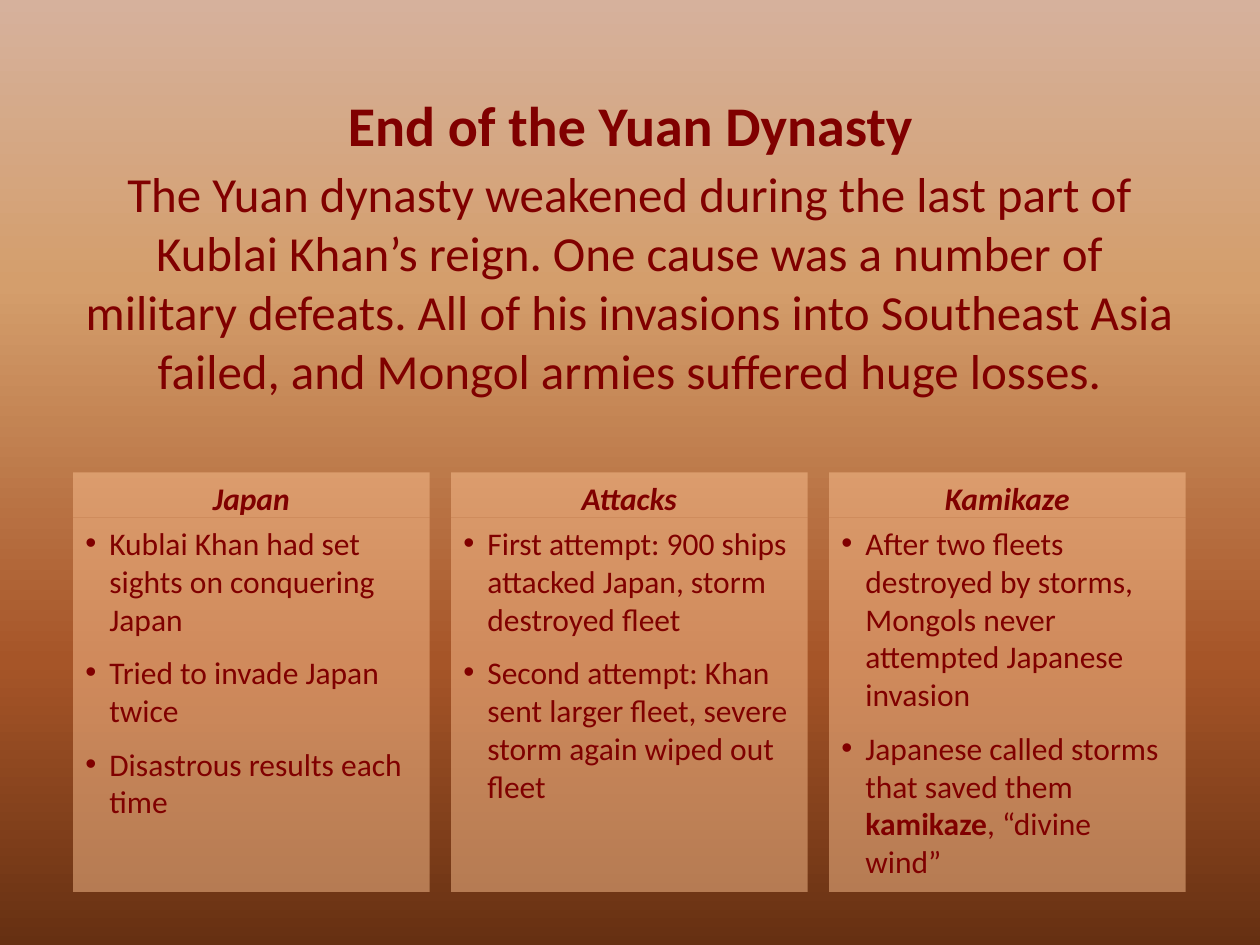
import copy
from dataclasses import dataclass

import pptx
import pptx.dml.color
import pptx.enum.shapes
import pptx.enum.text
import pptx.oxml
import pptx.oxml.ns
import pptx.util
from pptx.util import Inches

qn = pptx.oxml.ns.qn
PP_ALIGN = pptx.enum.text.PP_ALIGN


@dataclass(frozen=True)
class Theme:
    font: str = "Calibri"
    text: str = "800000"
    panel: str = "FAC090"
    panel_opacity: int = 50
    background: tuple = ((0, "D6B19C"), (30, "D49E6C"), (70, "A65528"), (100, "663012"))
    title_size: int = 32
    intro_size: int = 28
    panel_size: int = 18


THEME = Theme()

TITLE = "End of the Yuan Dynasty"
INTRO = (
    "The Yuan dynasty weakened during the last part of Kublai Khan’s reign. "
    "One cause was a number of military defeats. All of his invasions into "
    "Southeast Asia failed, and Mongol armies suffered huge losses."
)
# Each bullet is a list of (text, bold) runs
COLUMNS = [
    ("Japan", [
        [("Kublai Khan had set sights on conquering Japan", False)],
        [("Tried to invade Japan twice", False)],
        [("Disastrous results each time", False)],
    ]),
    ("Attacks", [
        [("First attempt: 900 ships attacked Japan, storm destroyed fleet", False)],
        [("Second attempt: Khan sent larger fleet, severe storm again wiped out fleet", False)],
    ]),
    ("Kamikaze", [
        [("After two fleets destroyed by storms, Mongols never attempted Japanese invasion", False)],
        [("Japanese called storms that saved them ", False), ("kamikaze", True),
         (", “divine wind”", False)],
    ]),
]


def rgb(value):
    return pptx.dml.color.RGBColor.from_string(value)


def add_run(paragraph, text, size, bold=False, italic=False):
    run = paragraph.add_run()
    run.text = text
    run.font.name = THEME.font
    run.font.size = pptx.util.Pt(size)
    run.font.bold = bold
    run.font.italic = italic
    run.font.color.rgb = rgb(THEME.text)


def add_bullet(paragraph, indent):
    properties = paragraph._p.get_or_add_pPr()
    properties.set("marL", str(indent))
    properties.set("indent", str(-indent))
    font = pptx.oxml.parse_xml(f'<a:buFont {pptx.oxml.ns.nsdecls("a")} typeface="Arial"/>')
    mark = pptx.oxml.parse_xml(f'<a:buChar {pptx.oxml.ns.nsdecls("a")} char="•"/>')
    properties.extend([font, mark])


def paint_background(slide):
    fill = slide.background.fill
    fill.gradient()
    fill.gradient_angle = 270
    stop_list = next(slide.element.iter(qn("a:gsLst")))
    for _ in THEME.background[2:]:
        stop_list.append(copy.deepcopy(stop_list[-1]))
    for stop, (position, color) in zip(fill.gradient_stops, THEME.background):
        stop.position = position / 100
        stop.color.rgb = rgb(color)


def add_centered_text(slide, box, text, size, bold=False):
    shape = slide.shapes.add_textbox(*map(Inches, box))
    shape.text_frame.word_wrap = True
    paragraph = shape.text_frame.paragraphs[0]
    paragraph.alignment = PP_ALIGN.CENTER
    add_run(paragraph, text, size, bold)


def add_panel(group, box):
    shape = group.shapes.add_shape(
        pptx.enum.shapes.MSO_SHAPE.RECTANGLE, *map(Inches, box))
    shape.shadow.inherit = False
    shape.line.fill.background()
    shape.fill.solid()
    shape.fill.fore_color.rgb = rgb(THEME.panel)
    color = next(shape._element.spPr.iter(qn("a:srgbClr")))
    color.append(pptx.oxml.parse_xml(
        f'<a:alpha {pptx.oxml.ns.nsdecls("a")} val="{THEME.panel_opacity * 1000}"/>'))
    shape.text_frame.word_wrap = True
    shape.text_frame.vertical_anchor = pptx.enum.text.MSO_ANCHOR.TOP
    return shape.text_frame


def add_column(slide, box, heading, bullets):
    left, top, width, height = box
    heading_height = 0.36
    group = slide.shapes.add_group_shape()

    # Bullet panel
    frame = add_panel(
        group, (left, top + heading_height, width, height - heading_height))
    for index, runs in enumerate(bullets):
        paragraph = frame.add_paragraph() if index else frame.paragraphs[0]
        paragraph.alignment = PP_ALIGN.LEFT
        paragraph.space_after = pptx.util.Pt(THEME.panel_size / 2)
        add_bullet(paragraph, Inches(0.19))
        for text, bold in runs:
            add_run(paragraph, text, THEME.panel_size, bold)

    # Heading panel
    frame = add_panel(group, (left, top, width, heading_height))
    paragraph = frame.paragraphs[0]
    paragraph.alignment = PP_ALIGN.CENTER
    add_run(paragraph, heading, THEME.panel_size, bold=True, italic=True)


def add_columns(slide, box, columns, gap=0.17):
    left, top, width, height = box
    column_width = (width - gap * (len(columns) - 1)) / len(columns)
    for index, (heading, bullets) in enumerate(columns):
        column_left = left + index * (column_width + gap)
        add_column(slide, (column_left, top, column_width, height), heading, bullets)


def main():
    presentation = pptx.Presentation()
    presentation.slide_width = Inches(10)
    presentation.slide_height = Inches(7.5)
    slide = presentation.slides.add_slide(presentation.slide_layouts[6])

    paint_background(slide)
    add_centered_text(slide, (0.58, 1.25, 8.83, 1.99), INTRO, THEME.intro_size)
    add_columns(slide, (0.58, 3.75, 8.83, 3.33), COLUMNS)
    add_centered_text(slide, (0.67, 0.67, 8.67, 0.58), TITLE, THEME.title_size, bold=True)

    presentation.save("out.pptx")


if __name__ == "__main__":
    main()
